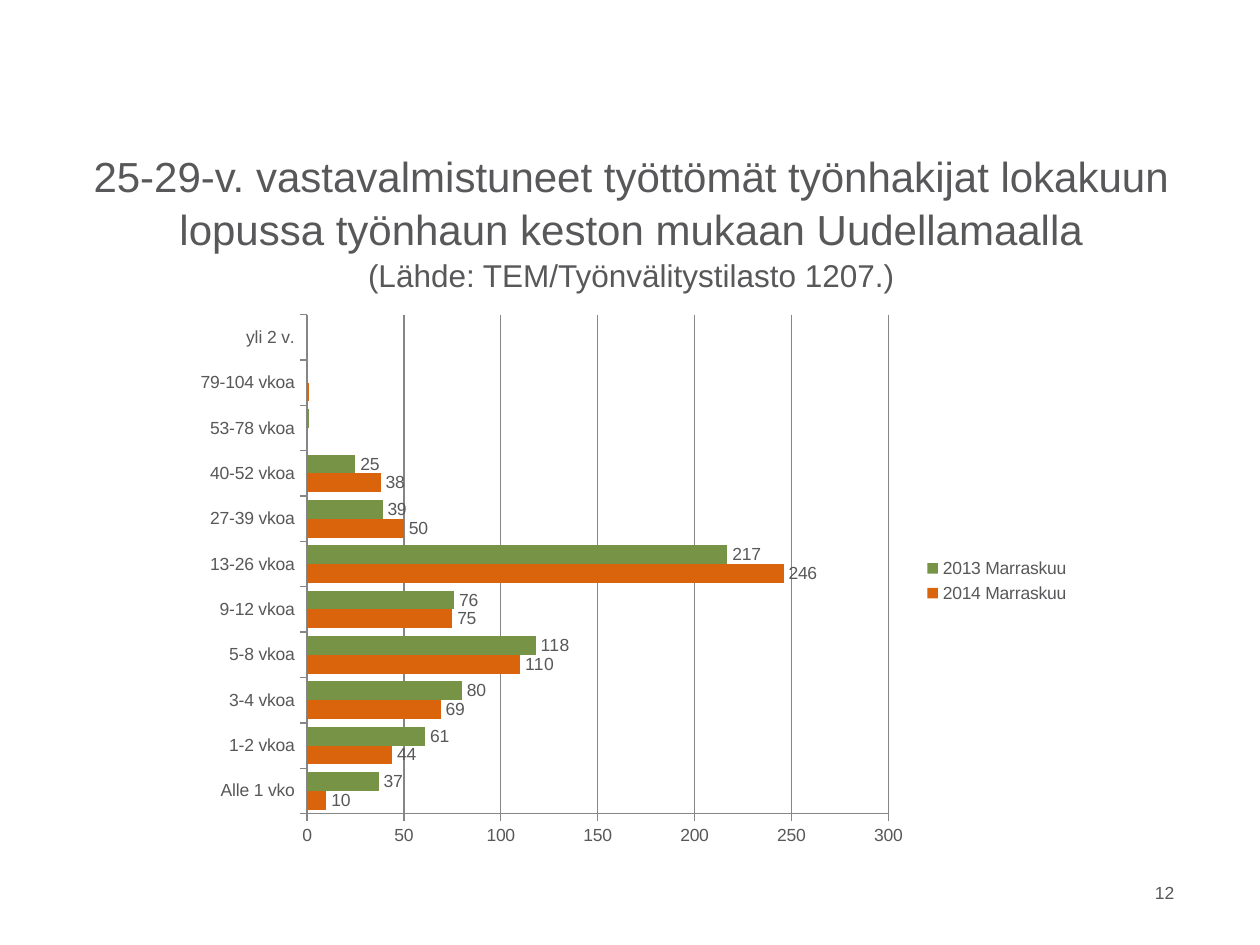
import pptx
import pptx.chart.data
import pptx.dml.color
import pptx.enum.chart
import pptx.enum.text
import pptx.oxml
import pptx.oxml.ns
import pptx.util

Pt = pptx.util.Pt
Align = pptx.enum.text.PP_ALIGN
Enum = pptx.enum.chart

FONT = "Arial"
COLORS = {"text": "58585A", "line": "868686", "2014": "D9640C", "2013": "779346"}
WEEKS = ["Alle 1 vko", "1-2 vkoa", "3-4 vkoa", "5-8 vkoa", "9-12 vkoa", "13-26 vkoa",
         "27-39 vkoa", "40-52 vkoa", "53-78 vkoa", "79-104 vkoa", "yli 2 v."]
COUNTS = {
    "2014": [10, 44, 69, 110, 75, 246, 50, 38, 0, 1, 0],
    "2013": [37, 61, 80, 118, 76, 217, 39, 25, 1, 0, 0],
}
PLOT = {"x": 0.137, "y": 0.02, "w": 0.647, "h": 0.9}


def color(name):
    return pptx.dml.color.RGBColor.from_string(COLORS[name])


def style(font, size):
    font.name = FONT
    font.size = Pt(size)
    font.bold = False
    font.color.rgb = color("text")


def write(frame, parts, align=Align.LEFT, anchor=pptx.enum.text.MSO_ANCHOR.TOP, space=None):
    """Fill the frame with one paragraph of (text, size) parts, a line break between them."""
    frame.word_wrap = True
    frame.auto_size = pptx.enum.text.MSO_AUTO_SIZE.NONE
    frame.vertical_anchor = anchor
    para = frame.paragraphs[0]
    para.alignment = align
    para.line_spacing = space
    for i, (text, size) in enumerate(parts):
        if i:
            para.add_line_break()
        run = para.add_run()
        run.text = text
        style(run.font, size)


def add_title(slide):
    title = slide.shapes.title
    title.left, title.top, title.width, title.height = Pt(36.7), Pt(101), Pt(648), Pt(50.4)
    parts = [
        ("25-29-v. vastavalmistuneet työttömät työnhakijat lokakuun "
         "lopussa työnhaun keston mukaan Uudellamaalla", 24),
        ("(Lähde: TEM/Työnvälitystilasto 1207.)", 18),
    ]
    write(title.text_frame, parts, align=Align.CENTER,
          anchor=pptx.enum.text.MSO_ANCHOR.MIDDLE, space=1.06)


def add_number(slide):
    box = slide.shapes.add_textbox(Pt(646.5), Pt(500.4), Pt(31.7), Pt(28.8))
    write(box.text_frame, [("12", 10)], align=Align.RIGHT)


def set_line(line):
    line.color.rgb = color("line")
    line.width = Pt(0.75)


def set_axis(axis):
    axis.major_tick_mark = Enum.XL_TICK_MARK.OUTSIDE
    axis.minor_tick_mark = Enum.XL_TICK_MARK.NONE
    set_line(axis.format.line)
    style(axis.tick_labels.font, 10)


def set_bars(series, fill):
    series.format.fill.solid()
    series.format.fill.fore_color.rgb = color(fill)
    series.invert_if_negative = False
    labels = series.data_labels
    labels.show_value = True
    labels.position = Enum.XL_LABEL_POSITION.OUTSIDE_END
    style(labels.font, 10)
    # The three longest durations carry no label
    for spot, idx in enumerate(range(8, 11)):
        labels._element.insert(spot, pptx.oxml.parse_xml(
            f'<c:dLbl {pptx.oxml.ns.nsdecls("c")}><c:idx val="{idx}"/>'
            '<c:delete val="1"/></c:dLbl>'))


def place_plot(chart):
    """Fix the inner plot area as fractions of the chart."""
    area = chart._chartSpace.chart.plotArea
    for old in area.findall(pptx.oxml.ns.qn("c:layout")):
        area.remove(old)
    modes = '<c:xMode val="edge"/><c:yMode val="edge"/>'
    sizes = "".join(f'<c:{key} val="{val}"/>' for key, val in PLOT.items())
    area.insert(0, pptx.oxml.parse_xml(
        f'<c:layout {pptx.oxml.ns.nsdecls("c")}><c:manualLayout>'
        f'<c:layoutTarget val="inner"/>{modes}{sizes}</c:manualLayout></c:layout>'))


def add_bars(slide):
    data = pptx.chart.data.CategoryChartData()
    data.categories = WEEKS
    for year, counts in COUNTS.items():
        data.add_series(f"{year} Marraskuu", counts)
    chart = slide.shapes.add_chart(Enum.XL_CHART_TYPE.BAR_CLUSTERED, Pt(105.1), Pt(173.5),
                                   Pt(513.4), Pt(316.8), data).chart
    style(chart.font, 10)
    chart.has_title = False
    chart.has_legend = True
    chart.legend.position = Enum.XL_LEGEND_POSITION.RIGHT
    chart.legend.include_in_layout = False
    style(chart.legend.font, 10)

    plot = chart.plots[0]
    plot.gap_width = 42
    plot.overlap = 0
    plot.vary_by_categories = False
    for series, year in zip(plot.series, COUNTS):
        set_bars(series, year)

    set_axis(chart.category_axis)
    scale = chart.value_axis
    set_axis(scale)
    scale.minimum_scale, scale.maximum_scale, scale.major_unit = 0, 300, 50
    scale.has_major_gridlines = True
    set_line(scale.major_gridlines.format.line)
    place_plot(chart)


def main():
    deck = pptx.Presentation()
    deck.slide_width, deck.slide_height = Pt(720), Pt(540)
    slide = deck.slides.add_slide(deck.slide_layouts[5])
    add_title(slide)
    add_bars(slide)
    add_number(slide)
    deck.save("out.pptx")


if __name__ == "__main__":
    main()
